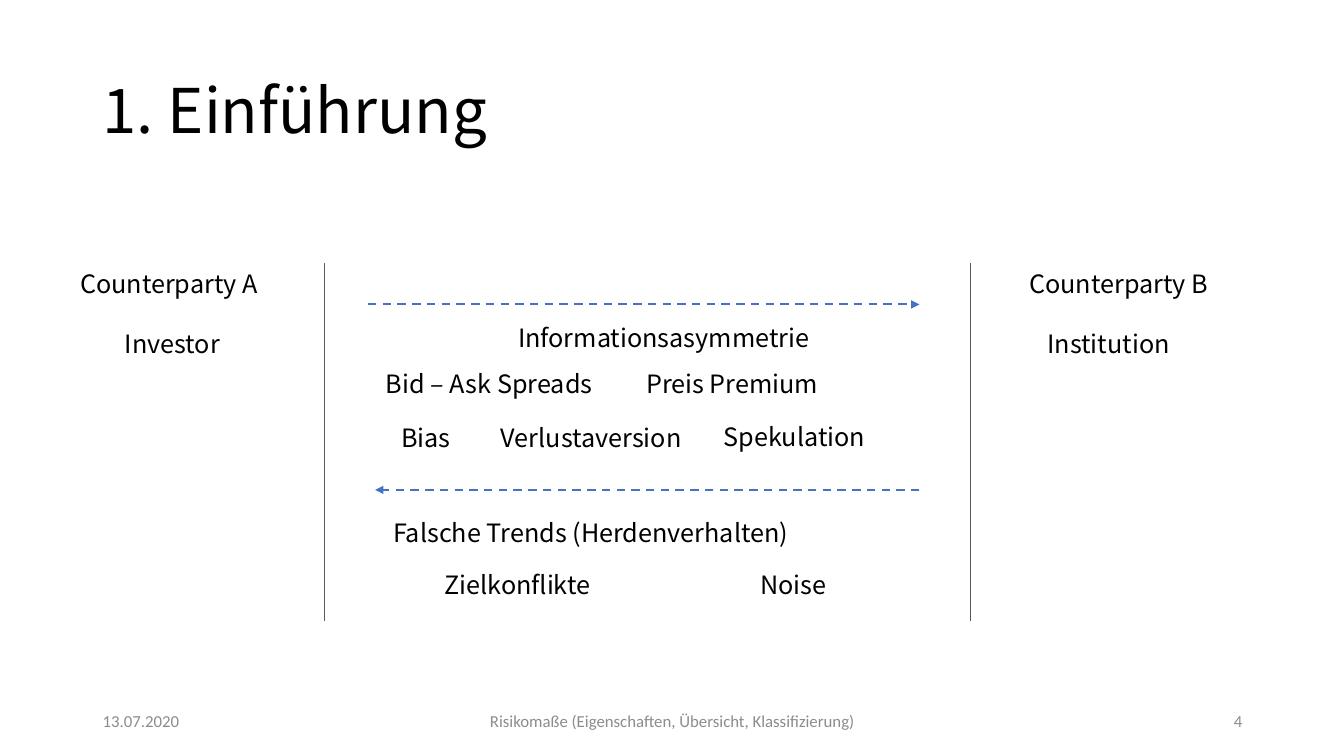
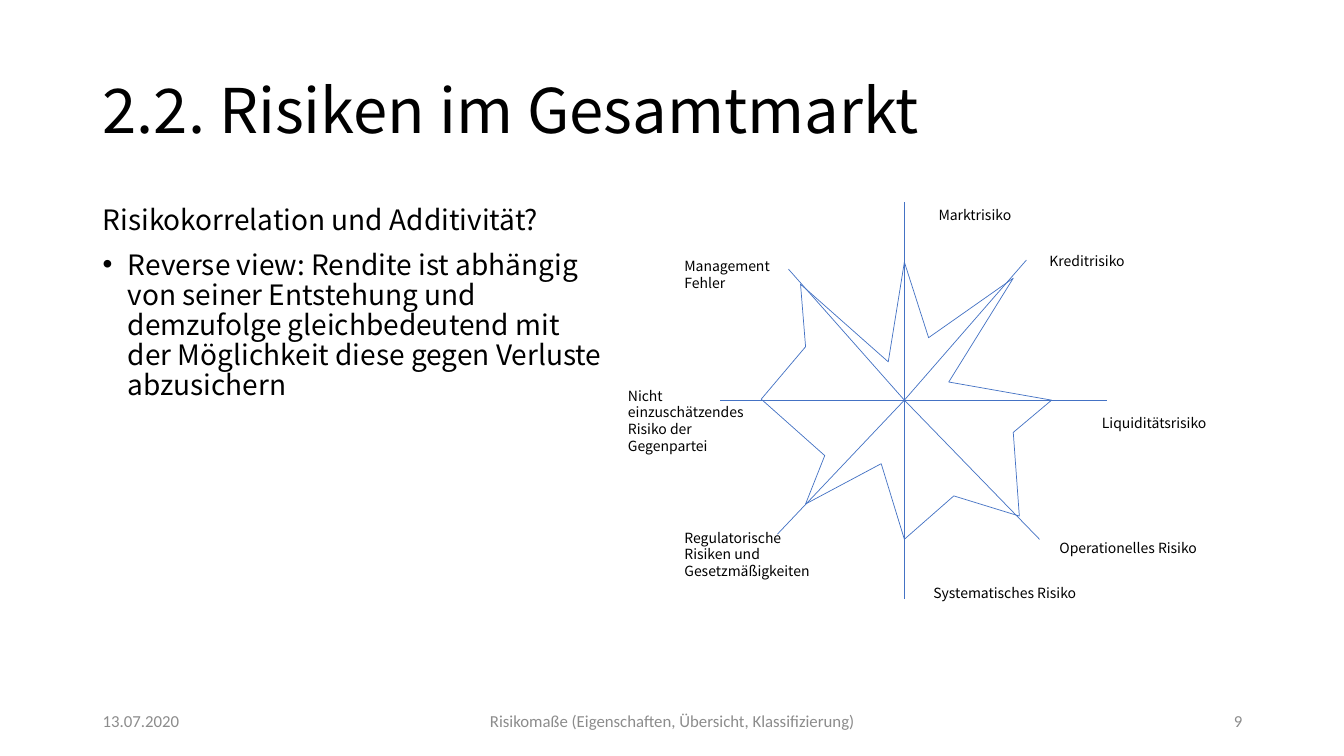
from typing import NamedTuple

from lxml.etree import SubElement
from pptx import Presentation
from pptx.dml.color import RGBColor
from pptx.enum.dml import MSO_LINE_DASH_STYLE as DASH
from pptx.enum.shapes import MSO_CONNECTOR, MSO_SHAPE
from pptx.enum.text import MSO_ANCHOR as ANCHOR, PP_ALIGN as ALIGN
from pptx.oxml.ns import qn
from pptx.util import Emu, Pt

# Shared style; 100 px are one inch
PX = 9144
W, H = 1333, 750
FONT, FOOT_FONT = "Noto Sans CJK KR", "Calibri"
BLACK, GRAY, BLUE, WHITE, RULE = "000000", "8C8C8C", "4472C4", "FFFFFF", "595959"
DATE = "13.07.2020"
FOOTER = "Risikomaße (Eigenschaften, Übersicht, Klassifizierung)"


class Box(NamedTuple):
    x: int
    y: int
    w: int
    h: int


class Label(NamedTuple):
    text: str
    box: Box
    align: ALIGN = ALIGN.LEFT
    wrap: bool = False


class Line(NamedTuple):
    x1: int
    y1: int
    x2: int
    y2: int


def px(n: int) -> Emu:
    return Emu(n * PX)


def rgb(color: str) -> RGBColor:
    return RGBColor.from_string(color)


def add_run(p, text: str, size: int, font: str = FONT, color: str = BLACK) -> None:
    r = p.add_run()
    r.text = text
    r.font.size, r.font.name = Pt(size), font
    r.font.color.rgb = rgb(color)


def add_text(slide, label: Label, size: int, font: str = FONT,
             color: str = BLACK, anchor: ANCHOR = ANCHOR.TOP):
    tf = slide.shapes.add_textbox(*map(px, label.box)).text_frame
    tf.word_wrap, tf.vertical_anchor = label.wrap, anchor
    p = tf.paragraphs[0]
    p.alignment = label.align
    add_run(p, label.text, size, font, color)
    return tf


def add_line(slide, line: Line, color: str = BLUE, width: float = 0.5,
             arrow: bool = False) -> None:
    c = slide.shapes.add_connector(MSO_CONNECTOR.STRAIGHT, *map(px, line))
    c.line.color.rgb, c.line.width = rgb(color), Pt(width)
    if arrow:
        c.line.dash_style = DASH.DASH
        SubElement(c.line._get_or_add_ln(), qn("a:tailEnd"), type="triangle")
    SubElement(c._element.spPr, qn("a:effectLst"))


def add_slide(prs, title: str, number: int):
    slide = prs.slides.add_slide(prs.slide_layouts[6])
    tf = add_text(slide, Label(title, Box(92, 40, 1150, 145), wrap=True), 44,
                  anchor=ANCHOR.MIDDLE)
    tf.paragraphs[0].line_spacing = 0.9
    for label in (Label(DATE, Box(92, 695, 300, 40), ALIGN.LEFT, True),
                  Label(FOOTER, Box(442, 695, 450, 40), ALIGN.CENTER, True),
                  Label(str(number), Box(942, 695, 300, 40), ALIGN.RIGHT, True)):
        add_text(slide, label, 12, FOOT_FONT, GRAY, ANCHOR.MIDDLE)
    return slide


# Slide 1: two counterparties and what passes between them
TERMS = [
    Label("Counterparty A", Box(49, 261, 237, 40), ALIGN.CENTER, True),
    Label("Counterparty B", Box(1011, 261, 237, 40), wrap=True),
    Label("Investor", Box(114, 321, 126, 40)),
    Label("Institution", Box(1029, 321, 142, 40)),
    Label("Informationsasymmetrie", Box(504, 315, 313, 40)),
    Label("Bid – Ask Spreads", Box(373, 360, 241, 40)),
    Label("Preis Premium", Box(631, 360, 198, 40)),
    Label("Bias", Box(388, 414, 72, 40)),
    Label("Verlustaversion", Box(487, 414, 212, 40)),
    Label("Spekulation", Box(708, 413, 160, 40)),
    Label("Falsche Trends (Herdenverhalten)", Box(380, 508, 438, 40)),
    Label("Zielkonflikte", Box(431, 560, 171, 40)),
    Label("Noise", Box(744, 560, 90, 40)),
]
ARROWS = [Line(365, 302, 912, 302), Line(912, 486, 372, 486)]


def build_intro(prs) -> None:
    slide = add_slide(prs, "1. Einführung", 4)
    for x in (322, 962):
        add_line(slide, Line(x, 261, x, 616), RULE)
    for arrow in ARROWS:
        add_line(slide, arrow, width=1.5, arrow=True)
    for term in TERMS:
        add_text(slide, term, 18)


# Slide 2: risk star
QUESTION = "Risikokorrelation und Additivität?"
ANSWER = ("Reverse view: Rendite ist abhängig von seiner Entstehung und demzufolge "
          "gleichbedeutend mit der Möglichkeit diese gegen Verluste abzusichern")
RISKS = [
    Label("Marktrisiko", Box(921, 200, 101, 30)),
    Label("Kreditrisiko", Box(1031, 246, 101, 30)),
    Label("Liquiditätsrisiko", Box(1083, 406, 128, 30)),
    Label("Operationelles Risiko", Box(1041, 530, 187, 30)),
    Label("Systematisches Risiko", Box(916, 575, 177, 30)),
    Label("Regulatorische Risiken und Gesetzmäßigkeiten", Box(669, 520, 156, 67)),
    Label("Nicht einzuschätzendes Risiko der Gegenpartei", Box(613, 379, 141, 81)),
    Label("Management Fehler", Box(669, 251, 107, 47)),
]
CENTER = (897, 397)
SPOKE_ENDS = [(897, 200), (1018, 258), (1098, 397), (1031, 535),
              (897, 594), (771, 530), (714, 397), (782, 267)]
STAR = [(897, 260), (921, 335), (1005, 276), (941, 379), (1043, 397), (1005, 429),
        (1011, 512), (946, 492), (897, 535), (874, 460), (799, 500), (818, 452),
        (755, 396), (799, 344), (794, 282), (881, 359)]


def add_risk(slide, risk: Label) -> None:
    sp = slide.shapes.add_shape(MSO_SHAPE.RECTANGLE, *map(px, risk.box))
    sp.shadow.inherit = False
    sp.fill.solid()
    sp.fill.fore_color.rgb = rgb(WHITE)
    sp.line.fill.background()
    tf = sp.text_frame
    tf.word_wrap, tf.vertical_anchor = True, ANCHOR.TOP
    tf.paragraphs[0].alignment = risk.align
    add_run(tf.paragraphs[0], risk.text, 10)


def add_star(slide) -> None:
    outline = slide.shapes.build_freeform(*STAR[0], scale=PX)
    outline.add_line_segments(STAR[1:], close=True)
    sp = outline.convert_to_shape()
    sp.shadow.inherit = False
    sp.fill.background()
    sp.line.color.rgb, sp.line.width = rgb(BLUE), Pt(0.5)


def build_risks(prs) -> None:
    slide = add_slide(prs, "2.2. Risiken im Gesamtmarkt", 9)
    tf = add_text(slide, Label(QUESTION, Box(92, 200, 521, 441), wrap=True), 20)
    p = tf.add_paragraph()
    add_run(p, ANSWER, 20)
    for para in tf.paragraphs:
        para.line_spacing, para.space_before = 0.9, Pt(10)
    pPr = p._p.get_or_add_pPr()
    pPr.set("marL", str(px(25)))
    pPr.set("indent", str(px(-25)))
    SubElement(pPr, qn("a:buFont"), typeface="Arial")
    SubElement(pPr, qn("a:buChar"), char="•")

    for risk in RISKS:
        add_risk(slide, risk)
    for end in SPOKE_ENDS:
        add_line(slide, Line(*CENTER, *end))
    add_star(slide)


def main() -> None:
    prs = Presentation()
    prs.slide_width, prs.slide_height = px(W), px(H)
    build_intro(prs)
    build_risks(prs)
    prs.save("out.pptx")


if __name__ == "__main__":
    main()
